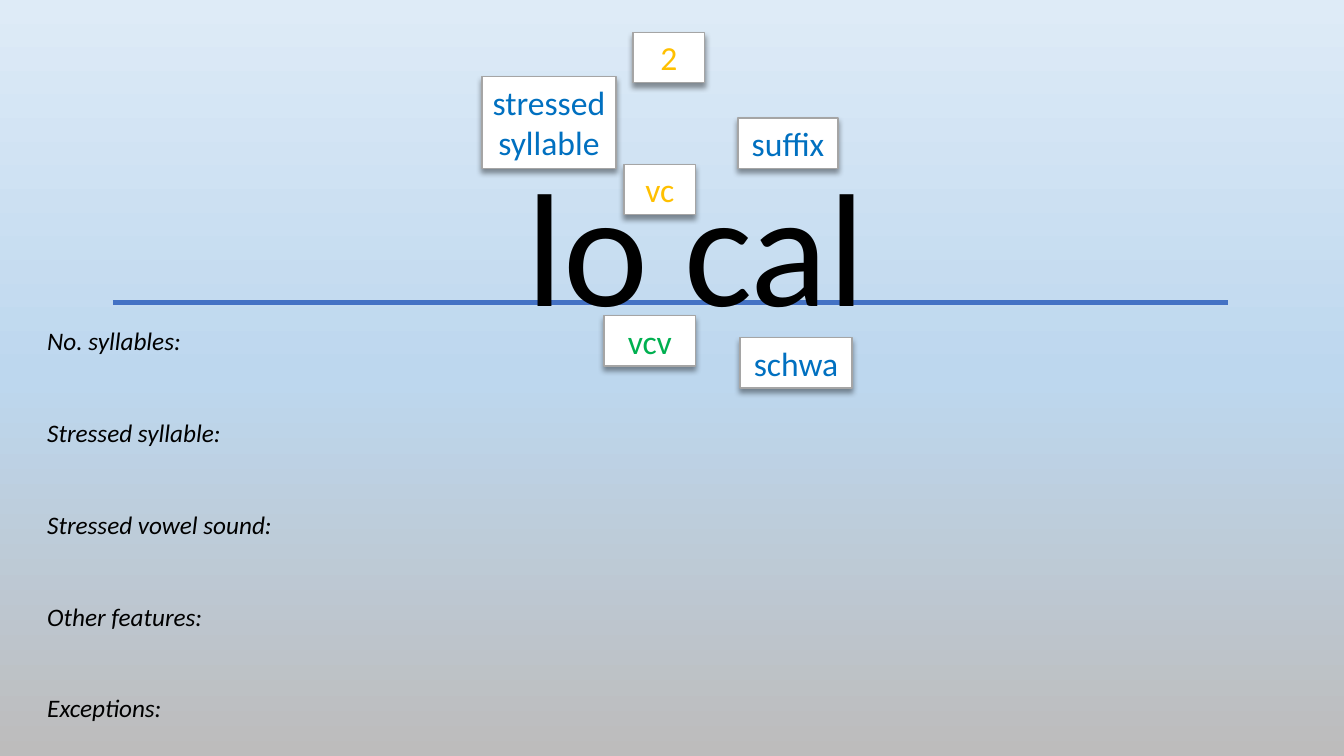
"""Build a spelling-analysis slide for the word "lo cal"."""
from copy import deepcopy
from dataclasses import dataclass

from lxml.etree import SubElement
from pptx import Presentation
from pptx.dml.color import RGBColor
from pptx.enum.shapes import MSO_CONNECTOR, MSO_SHAPE
from pptx.enum.text import MSO_ANCHOR, MSO_AUTO_SIZE, PP_ALIGN
from pptx.oxml.ns import qn
from pptx.shapes.autoshape import Shape
from pptx.slide import Slide
from pptx.util import Inches, Pt


@dataclass(frozen=True)
class Theme:
    """Colours, font and type sizes of the slide."""
    font: str = "Calibri"
    word_size: float = 115
    tag_size: float = 24
    prompt_size: float = 18
    prompt_gap: float = 44
    black: str = "000000"
    white: str = "FFFFFF"
    border: str = "A5A5A5"
    rule: str = "4472C4"
    blue: str = "0070C0"
    green: str = "00B050"
    gold: str = "FFC000"
    background: tuple[str, ...] = ("DEEBF7", "BDD7EE", "BDBCBC")


THEME = Theme()


@dataclass(frozen=True)
class Box:
    """Lines of text with a place and a style."""
    lines: tuple[str, ...]
    left: float
    top: float
    width: float
    height: float
    color: str = THEME.black
    size: float = THEME.tag_size
    align: PP_ALIGN = PP_ALIGN.CENTER
    italic: bool = False
    gap: float = 0

    def frame(self) -> tuple[int, ...]:
        """Return left, top, width and height as lengths."""
        return tuple(Inches(v) for v in (self.left, self.top, self.width, self.height))


BACK_TAGS = (
    Box(("schwa",), 7.34, 3.35, 1.11, 0.5, THEME.blue),
    Box(("suffix",), 7.32, 1.17, 0.99, 0.5, THEME.blue),
    Box(("stressed", "syllable"), 4.78, 0.76, 1.33, 0.91, THEME.blue),
    Box(("vcv",), 5.99, 3.13, 0.91, 0.5, THEME.green),
)
WORD = Box(("lo cal",), 1.98, 1.39, 9.84, 2.04, size=THEME.word_size)
FRONT_TAGS = (
    Box(("vc",), 6.19, 1.63, 0.71, 0.5, THEME.gold),
    Box(("2",), 6.28, 0.32, 0.71, 0.5, THEME.gold),
)
PROMPTS = Box(
    ("No. syllables:", "Stressed syllable:", "Stressed vowel sound:",
     "Other features:", "Exceptions:"),
    0.37, 3.18, 2.45, 4.04, size=THEME.prompt_size,
    align=PP_ALIGN.LEFT, italic=True, gap=THEME.prompt_gap,
)


def rgb(color: str) -> RGBColor:
    """Convert a hex string to a colour."""
    return RGBColor.from_string(color)


def paint_background(s: Slide) -> None:
    """Fill the background with an even vertical gradient."""
    fill = s.background.fill
    fill.gradient()
    fill.gradient_angle = 270
    stops = s.element.find(".//" + qn("a:gsLst"))
    stops.append(deepcopy(stops[-1]))
    last = len(THEME.background) - 1
    for i, (stop, color) in enumerate(zip(fill.gradient_stops, THEME.background)):
        stop.position = i / last
        stop.color.rgb = rgb(color)


def write(sp: Shape, box: Box) -> None:
    """Set the text of a shape, one paragraph a line."""
    tf = sp.text_frame
    tf.word_wrap = True
    tf.auto_size = MSO_AUTO_SIZE.SHAPE_TO_FIT_TEXT
    tf.vertical_anchor = MSO_ANCHOR.TOP
    for i, line in enumerate(box.lines):
        p = tf.add_paragraph() if i else tf.paragraphs[0]
        p.text = line
        p.alignment = box.align
        p.space_before = Pt(box.gap if i else 0)
        p.font.name = THEME.font
        p.font.size = Pt(box.size)
        p.font.italic = box.italic
        p.font.color.rgb = rgb(box.color)


def add_text(s: Slide, box: Box) -> None:
    """Add a plain text box."""
    write(s.shapes.add_textbox(*box.frame()), box)


def add_tag(s: Slide, box: Box) -> None:
    """Add a white bordered label with a soft shadow below."""
    sp = s.shapes.add_shape(MSO_SHAPE.RECTANGLE, *box.frame())
    sp.fill.solid()
    sp.fill.fore_color.rgb = rgb(THEME.white)
    sp.line.color.rgb = rgb(THEME.border)
    sp.line.width = Pt(1)
    sp.shadow.inherit = False
    effects = sp.element.spPr.find(qn("a:effectLst"))
    shadow = SubElement(effects, qn("a:outerShdw"), blurRad=str(Pt(4)),
                        dist=str(Pt(3)), dir="5400000", rotWithShape="0")
    color = SubElement(shadow, qn("a:srgbClr"), val=THEME.black)
    SubElement(color, qn("a:alpha"), val="40000")
    write(sp, box)


def add_rule(s: Slide) -> None:
    """Add the line on which the word stands."""
    line = s.shapes.add_connector(
        MSO_CONNECTOR.STRAIGHT, Inches(1.12), Inches(3), Inches(12.18), Inches(3))
    line.line.color.rgb = rgb(THEME.rule)
    line.line.width = Pt(3)
    SubElement(line.element.spPr, qn("a:effectLst"))


def main() -> None:
    """Build and save the slide."""
    prs = Presentation()
    prs.slide_width, prs.slide_height = Inches(13.33), Inches(7.5)
    s = prs.slides.add_slide(prs.slide_layouts[6])
    paint_background(s)
    for tag in BACK_TAGS:
        add_tag(s, tag)
    add_rule(s)
    add_text(s, WORD)
    for tag in FRONT_TAGS:
        add_tag(s, tag)
    add_text(s, PROMPTS)
    prs.save("out.pptx")


if __name__ == "__main__":
    main()
